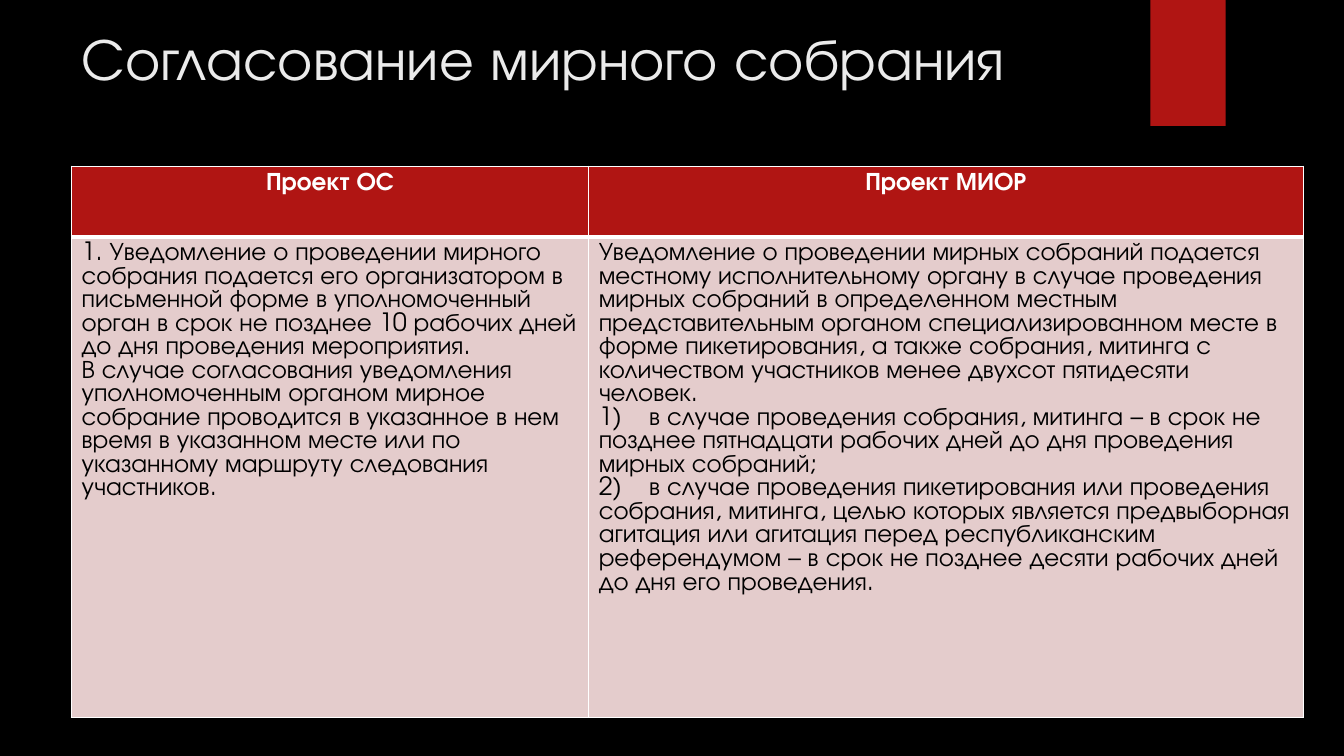
"""Build the slide comparing two drafts on approval of a peaceful assembly."""
from dataclasses import dataclass

from lxml.etree import SubElement
from pptx import Presentation
from pptx.dml.color import RGBColor
from pptx.enum.shapes import MSO_SHAPE as Preset
from pptx.enum.text import MSO_ANCHOR as Anchor, MSO_AUTO_SIZE as AutoSize, PP_ALIGN as Align
from pptx.oxml.ns import qn
from pptx.util import Pt


@dataclass(frozen=True)
class Theme:
    background: str = "000000"
    accent: str = "B01513"
    body_fill: str = "E4CCCC"
    title_text: str = "EBEBEB"
    header_text: str = "FFFFFF"
    body_text: str = "000000"
    border: str = "FFFFFF"
    font: str = "TeX Gyre Adventor"
    title_size: float = 42
    table_size: float = 18
    line_height: float = 16.8


theme = Theme()


def style_font(font, size, color, bold=False):
    font.name, font.size, font.bold = theme.font, Pt(size), bold
    font.color.rgb = RGBColor.from_string(color)


def add_border(cell, side, width):
    line = SubElement(cell._tc.get_or_add_tcPr(), qn(f"a:ln{side}"), w=str(Pt(width)))
    fill = SubElement(line, qn("a:solidFill"))
    SubElement(fill, qn("a:srgbClr"), val=theme.border)


columns = [
    (369.4, "Проект ОС", [
        "1. Уведомление о проведении мирного собрания подается его организатором в письменной форме "
        "в уполномоченный орган в срок не позднее 10 рабочих дней до дня проведения мероприятия.",
        "В случае согласования уведомления уполномоченным органом мирное собрание проводится "
        "в указанное в нем время в указанном месте или по указанному маршруту следования участников.",
    ]),
    (510.4, "Проект МИОР", [
        "Уведомление о проведении мирных собраний подается местному исполнительному органу в случае "
        "проведения мирных собраний в определенном местным представительным органом "
        "специализированном месте в форме пикетирования, а также собрания, митинга "
        "с количеством участников менее двухсот пятидесяти человек.",
        "1)\tв случае проведения собрания, митинга – в срок не позднее пятнадцати рабочих дней "
        "до дня проведения мирных собраний;",
        "2)\tв случае проведения пикетирования или проведения собрания, митинга, целью которых "
        "является предвыборная агитация или агитация перед республиканским референдумом – "
        "в срок не позднее десяти рабочих дней до дня его проведения.",
    ]),
]
row_heights = [50.4, 343.4]

presentation = Presentation()
presentation.slide_width, presentation.slide_height = Pt(960), Pt(540)
slide = presentation.slides.add_slide(presentation.slide_layouts[5])
slide.background.fill.solid()
slide.background.fill.fore_color.rgb = RGBColor.from_string(theme.background)

ribbon = slide.shapes.add_shape(Preset.RECTANGLE, Pt(821.8), Pt(0), Pt(53.8), Pt(90))
ribbon.shadow.inherit = False
ribbon.fill.solid()
ribbon.fill.fore_color.rgb = RGBColor.from_string(theme.accent)
ribbon.line.fill.background()

title = slide.shapes.title
title.left, title.top, title.width, title.height = Pt(51.1), Pt(12.2), Pt(741), Pt(110)
title.text_frame.text = "Согласование мирного собрания"
title.text_frame.word_wrap = True
title.text_frame.auto_size = AutoSize.NONE
title.text_frame.vertical_anchor = Anchor.TOP
title_paragraph = title.text_frame.paragraphs[0]
title_paragraph.alignment = Align.LEFT
style_font(title_paragraph.runs[0].font, theme.title_size, theme.title_text)

table_width = sum(width for width, _, _ in columns)
table = slide.shapes.add_table(
    len(row_heights), len(columns), Pt(51.1), Pt(118.8), Pt(table_width), Pt(sum(row_heights))
).table
for row, height in zip(table.rows, row_heights):
    row.height = Pt(height)

for column_index, (width, heading, body) in enumerate(columns):
    table.columns[column_index].width = Pt(width)
    for row_index, texts in enumerate([[heading], body]):
        is_header = row_index == 0
        cell = table.cell(row_index, column_index)
        for side in "LRTB":
            shared_edge = side == ("B" if is_header else "T")
            add_border(cell, side, 3 if shared_edge else 1)
        cell.fill.solid()
        cell.fill.fore_color.rgb = RGBColor.from_string(theme.accent if is_header else theme.body_fill)
        cell.text_frame.text = "\n".join(texts)
        for paragraph in cell.text_frame.paragraphs:
            paragraph.alignment = Align.CENTER if is_header else Align.LEFT
            paragraph.line_spacing = Pt(theme.line_height)
            if "\t" in paragraph.text:
                tabs = SubElement(paragraph._p.get_or_add_pPr(), qn("a:tabLst"))
                SubElement(tabs, qn("a:tab"), pos=str(Pt(36)), algn="l")
            color = theme.header_text if is_header else theme.body_text
            style_font(paragraph.runs[0].font, theme.table_size, color, is_header)

presentation.save("out.pptx")
